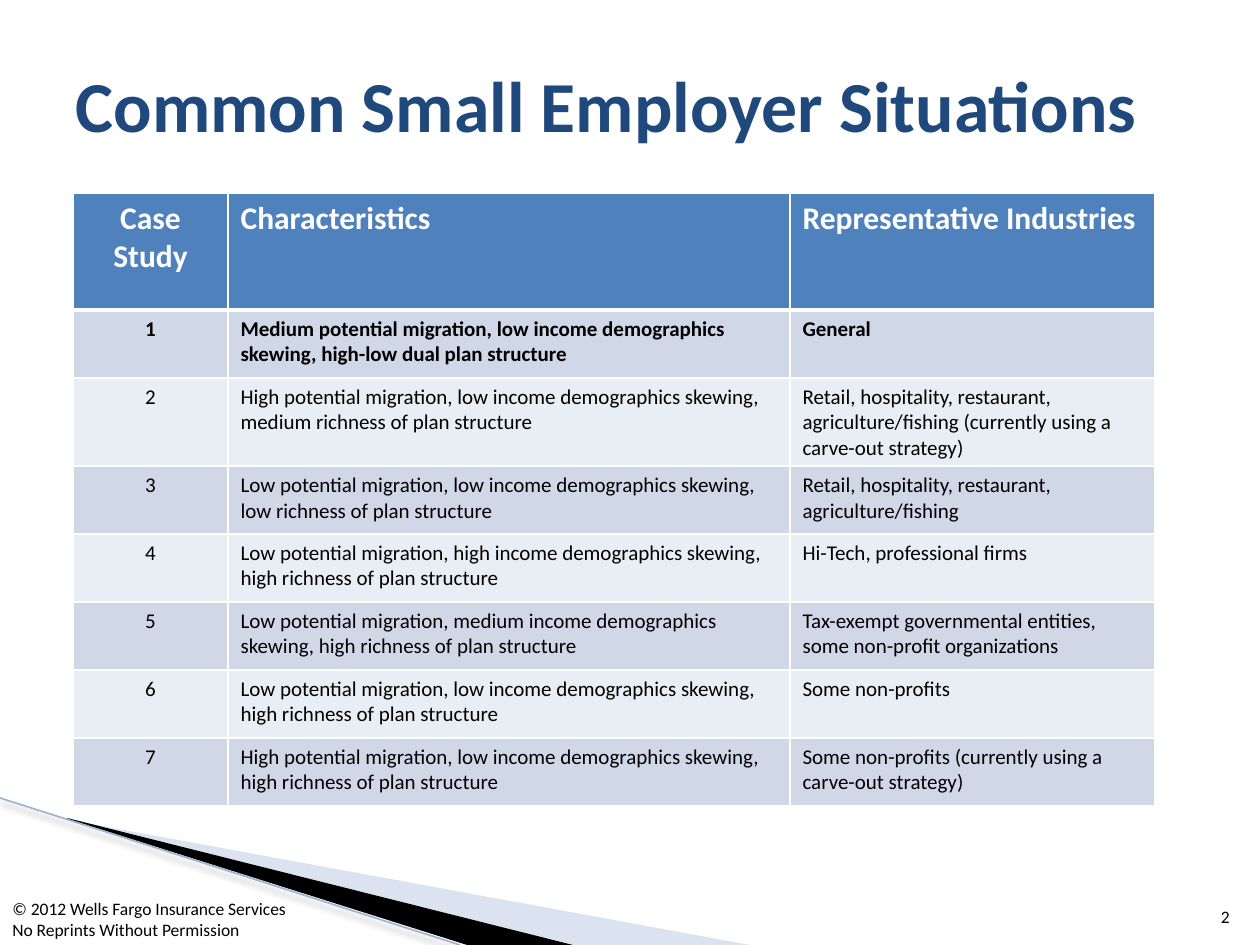
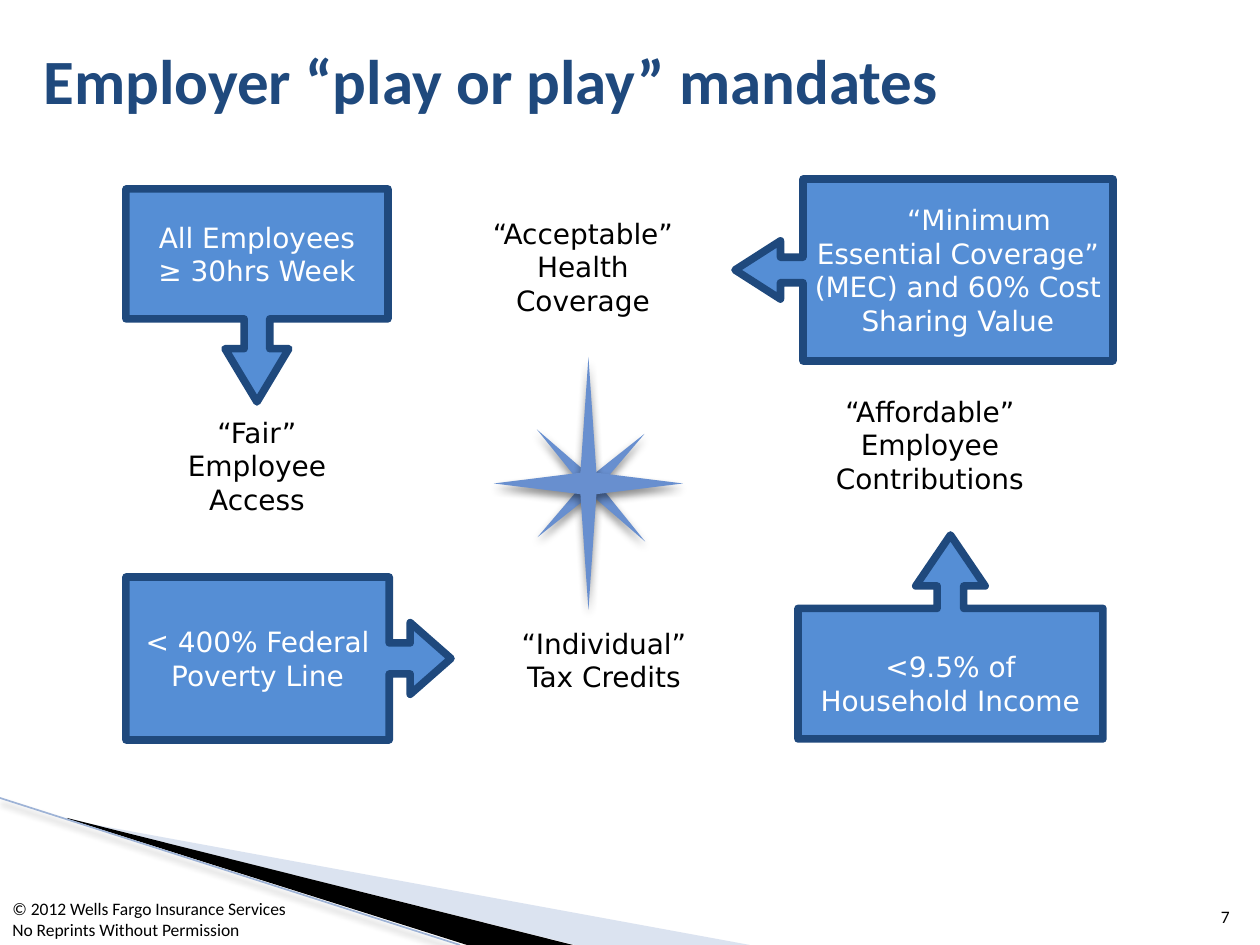
"""Build two slides on small employer situations and coverage mandates."""
from dataclasses import dataclass

from lxml.etree import SubElement
from pptx import Presentation
from pptx.dml.color import RGBColor
from pptx.enum.shapes import MSO_CONNECTOR, MSO_SHAPE
from pptx.enum.text import MSO_ANCHOR, MSO_AUTO_SIZE, PP_ALIGN
from pptx.oxml.ns import qn
from pptx.util import Pt

EMU_PER_PX = 914400 / 126
SLIDE_SIZE = (1260, 945)


@dataclass(frozen=True)
class Theme:
    title: str = "1F497D"
    text: str = "000000"
    white: str = "FFFFFF"
    header: str = "4F81BD"
    bands: tuple = ("D0D8E8", "E9EDF4")
    callout: str = "558ED5"
    star: str = "688FCF"
    swoosh: str = "A7B9DB"
    swoosh_edge: str = "9EB3D6"
    font: str = "Calibri"
    diagram_font: str = "DejaVu Sans"
    header_size: int = 18
    cell_size: int = 12
    diagram_size: int = 16
    small_size: int = 10


T = Theme()

FOOTER = ["© 2012 Wells Fargo Insurance Services", "No Reprints Without Permission"]
FOOTER_BOX = (0, 892, 630, 53)
NUMBER_BOX = (1192, 883, 50, 50)
PALE_WEDGE = [(69, 820), (750, 945), (575, 945), (69, 819)]
DARK_WEDGE = [(67, 818), (573, 945), (467, 945), (68, 819)]
SWOOSH_LINE = [(0, 798), (460, 945)]

SITUATIONS = {
    "title": "Common Small Employer Situations", "box": (63, 38, 1130, 132),
    "size": 41, "number": "2",
}
TABLE_BOX = (73, 193, 1082, 615)
COL_WIDTHS = (155, 562, 365)
HEADER_HEIGHT, ROW_HEIGHT = 117, 68
HEADINGS = ("Case Study", "Characteristics", "Representative Industries")
CASES = [
    ("Medium potential migration, low income demographics skewing, "
     "high-low dual plan structure", "General"),
    ("High potential migration, low income demographics skewing, "
     "medium richness of plan structure",
     "Retail, hospitality, restaurant, agriculture/fishing "
     "(currently using a carve-out strategy)"),
    ("Low potential migration, low income demographics skewing, "
     "low richness of plan structure",
     "Retail, hospitality, restaurant, agriculture/fishing"),
    ("Low potential migration, high income demographics skewing, "
     "high richness of plan structure", "Hi-Tech, professional firms"),
    ("Low potential migration, medium income demographics skewing, "
     "high richness of plan structure",
     "Tax-exempt governmental entities, some non-profit organizations"),
    ("Low potential migration, low income demographics skewing, "
     "high richness of plan structure", "Some non-profits"),
    ("High potential migration, low income demographics skewing, "
     "high richness of plan structure",
     "Some non-profits (currently using a carve-out strategy)"),
]

MANDATES = {
    "title": "Employer “play or play” mandates", "box": (31, 21, 1130, 116),
    "size": 36, "number": "7",
}
STARS = [((513, 411, 156, 149), 46), ((494, 357, 189, 253), 0)]
STAR_ADJ = 0.06
GOAL_WIDTH = 242
GOALS = [
    ((462, 210), 115, ["“Acceptable”", "Health Coverage"]),
    ((136, 409), 118, ["“Fair”", "Employee Access"]),
    ((809, 388), 118, ["“Affordable”", "Employee Contributions"]),
    ((483, 620), 81, ["“Individual”", "Tax Credits"]),
]
CALLOUTS = [
    {"kind": MSO_SHAPE.DOWN_ARROW_CALLOUT, "box": (126, 189, 262, 213),
     "adj": (0.12, 0.15, 0.25, 0.61), "text": ["All Employees", "≥ 30hrs Week"]},
    {"kind": MSO_SHAPE.UP_ARROW_CALLOUT, "box": (798, 535, 305, 204),
     "adj": (0.13, 0.17, 0.25, 0.64), "text": ["<9.5% of Household Income"],
     "side": 20, "top": 26},
    {"kind": MSO_SHAPE.LEFT_ARROW_CALLOUT, "box": (735, 179, 378, 182),
     "adj": (0.14, 0.16, 0.25, 0.82), "indent": 42,
     "text": ["“Minimum Essential Coverage” (MEC) and 60% Cost Sharing Value"]},
    {"kind": MSO_SHAPE.RIGHT_ARROW_CALLOUT, "box": (126, 577, 325, 163),
     "adj": (0.19, 0.22, 0.25, 0.81), "text": ["< 400% Federal Poverty Line"]},
]


def px(n):
    return round(n * EMU_PER_PX)


def emu(values):
    return [px(v) for v in values]


def rgb(color):
    return RGBColor.from_string(color)


def write(tf, lines, size, color=T.text, font=T.font, bold=False, align=PP_ALIGN.LEFT):
    tf.word_wrap = True
    for i, line in enumerate(lines):
        p = tf.add_paragraph() if i else tf.paragraphs[0]
        p.alignment = align
        r = p.add_run()
        r.text = line
        r.font.size, r.font.name, r.font.bold = Pt(size), font, bold
        r.font.color.rgb = rgb(color)


def add_text(slide, box, lines, size, anchor=MSO_ANCHOR.TOP, **style):
    tf = slide.shapes.add_textbox(*emu(box)).text_frame
    tf.vertical_anchor = anchor
    write(tf, lines, size, **style)


def paint(sp, color):
    sp.shadow.inherit = False
    sp.fill.solid()
    sp.fill.fore_color.rgb = rgb(color)
    sp.line.fill.background()


def add_shadow(sp, blur, alpha):
    pr = sp._element.spPr
    effects = pr.find(qn("a:effectLst"))
    if effects is None:
        effects = SubElement(pr, qn("a:effectLst"))
    shadow = SubElement(effects, qn("a:outerShdw"), blurRad=str(Pt(blur)),
                        dist=str(Pt(3)), dir="5400000", rotWithShape="0")
    color = SubElement(shadow, qn("a:srgbClr"), val=T.text)
    SubElement(color, qn("a:alpha"), val=str(alpha * 1000))


def add_wedge(slide, points, color):
    start, *rest = [emu(pt) for pt in points]
    fb = slide.shapes.build_freeform(*start)
    fb.add_line_segments(rest)
    sp = fb.convert_to_shape()
    paint(sp, color)
    return sp


def add_slide(prs, head):
    slide = prs.slides.add_slide(prs.slide_layouts[5])
    pale = add_wedge(slide, PALE_WEDGE, T.swoosh)
    color = pale._element.spPr.find(qn("a:solidFill"))[0]
    SubElement(color, qn("a:alpha"), val="40000")
    add_wedge(slide, DARK_WEDGE, T.text)
    start, end = SWOOSH_LINE
    line = slide.shapes.add_connector(MSO_CONNECTOR.STRAIGHT, *emu(start + end))
    line.line.color.rgb = rgb(T.swoosh_edge)
    line.line.width = Pt(0.95)
    add_shadow(line, 4, 35)

    title = slide.shapes.title
    title.left, title.top, title.width, title.height = emu(head["box"])
    tf = title.text_frame
    tf.auto_size = MSO_AUTO_SIZE.NONE
    tf.vertical_anchor = MSO_ANCHOR.MIDDLE
    write(tf, [head["title"]], head["size"], T.title, bold=True)

    add_text(slide, NUMBER_BOX, [head["number"]], T.small_size,
             MSO_ANCHOR.BOTTOM, align=PP_ALIGN.RIGHT)
    add_text(slide, FOOTER_BOX, FOOTER, T.small_size)
    return slide


def add_borders(cell, top, bottom):
    pr = cell._tc.get_or_add_tcPr()
    for side, width in zip("LRTB", (1, 1, top, bottom)):
        ln = SubElement(pr, qn(f"a:ln{side}"), w=str(Pt(width)))
        fill = SubElement(ln, qn("a:solidFill"))
        SubElement(fill, qn("a:srgbClr"), val=T.white)


def add_situations(slide):
    rows = [HEADINGS] + [(str(n), *case) for n, case in enumerate(CASES, 1)]
    table = slide.shapes.add_table(len(rows), len(HEADINGS), *emu(TABLE_BOX)).table
    for col, width in zip(table.columns, COL_WIDTHS):
        col.width = px(width)
    for i, row in enumerate(rows):
        header = i == 0
        table.rows[i].height = px(HEADER_HEIGHT if header else ROW_HEIGHT)
        for j, text in enumerate(row):
            cell = table.cell(i, j)
            add_borders(cell, 3 if i == 1 else 1, 3 if header else 1)
            cell.fill.solid()
            cell.fill.fore_color.rgb = rgb(T.header if header else T.bands[(i - 1) % 2])
            write(cell.text_frame, [text], T.header_size if header else T.cell_size,
                  T.white if header else T.text, bold=i < 2,
                  align=PP_ALIGN.LEFT if j else PP_ALIGN.CENTER)


def add_callout(slide, item):
    sp = slide.shapes.add_shape(item["kind"], *emu(item["box"]))
    for i, value in enumerate(item["adj"]):
        sp.adjustments[i] = value
    paint(sp, T.callout)
    sp.line.color.rgb = rgb(T.title)
    sp.line.width = Pt(4.33)
    tf = sp.text_frame
    tf.vertical_anchor = MSO_ANCHOR.MIDDLE
    tf.margin_left = tf.margin_right = px(item.get("side", 8))
    tf.margin_top = px(item.get("top", 6))
    write(tf, item["text"], T.diagram_size, T.white, T.diagram_font,
          align=PP_ALIGN.CENTER)
    if "indent" in item:
        tf.paragraphs[0]._p.get_or_add_pPr().set("indent", str(px(item["indent"])))


def add_mandates(slide):
    for box, angle in STARS:
        sp = slide.shapes.add_shape(MSO_SHAPE.STAR_4_POINT, *emu(box))
        sp.adjustments[0] = STAR_ADJ
        sp.rotation = angle
        paint(sp, T.star)
        add_shadow(sp, 5, 45)
    for corner, height, lines in GOALS:
        add_text(slide, (*corner, GOAL_WIDTH, height), lines, T.diagram_size,
                 font=T.diagram_font, align=PP_ALIGN.CENTER)
    for item in CALLOUTS:
        add_callout(slide, item)


def main():
    prs = Presentation()
    prs.slide_width, prs.slide_height = emu(SLIDE_SIZE)
    add_situations(add_slide(prs, SITUATIONS))
    add_mandates(add_slide(prs, MANDATES))
    prs.save("out.pptx")


if __name__ == "__main__":
    main()
